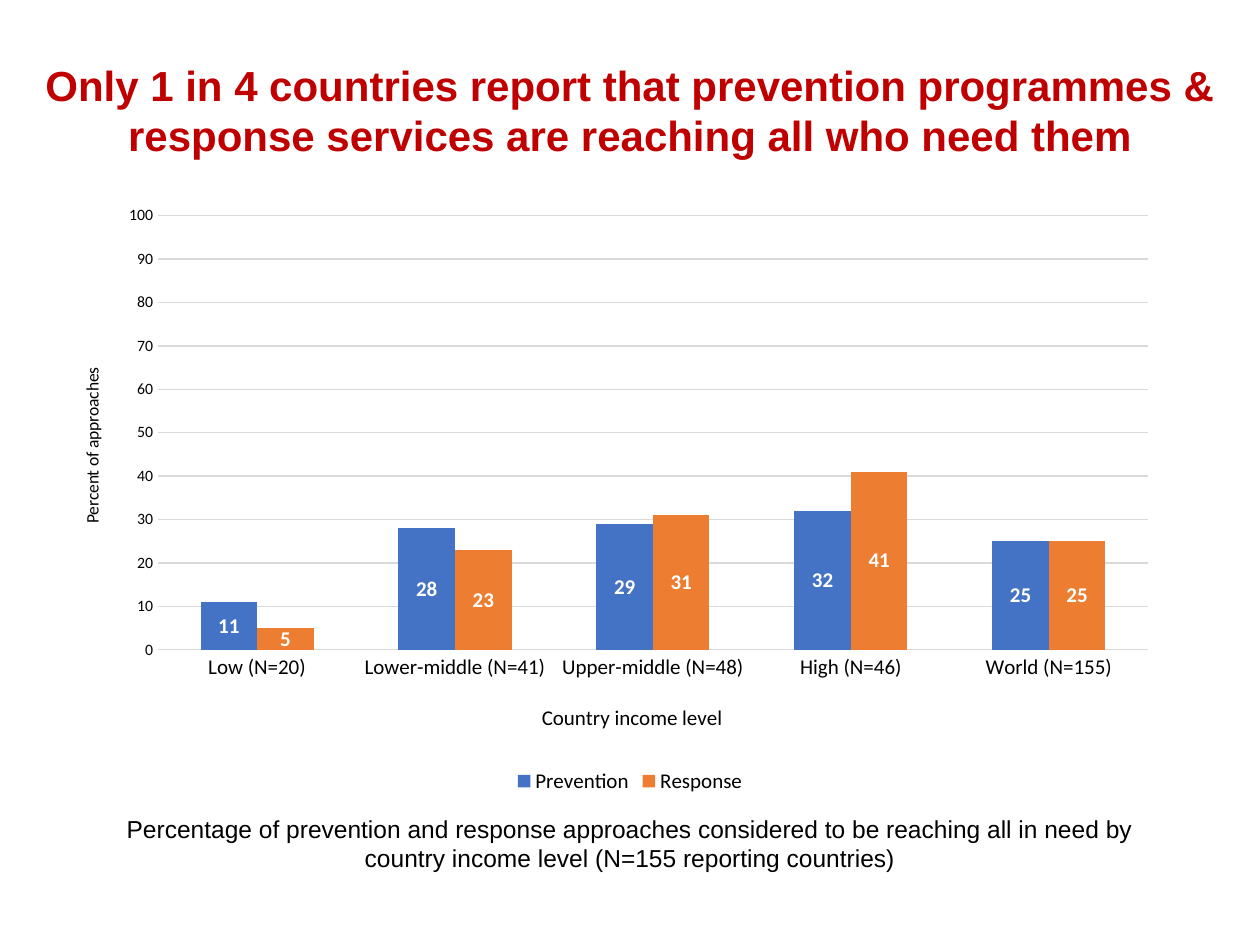
from dataclasses import dataclass

from lxml.etree import SubElement
from pptx import Presentation
from pptx.chart.data import CategoryChartData
from pptx.dml.color import RGBColor
from pptx.enum.chart import XL_CHART_TYPE, XL_LABEL_POSITION, XL_LEGEND_POSITION, XL_TICK_MARK
from pptx.enum.text import MSO_ANCHOR, MSO_AUTO_SIZE, PP_ALIGN
from pptx.oxml import parse_xml
from pptx.oxml.ns import nsdecls, qn
from pptx.util import Cm, Pt


@dataclass(frozen=True)
class Theme:
    head: str = "C00000"
    ink: str = "000000"
    grid: str = "D9D9D9"
    white: str = "FFFFFF"
    blue: str = "4472C4"
    orange: str = "ED7D31"
    face: str = "Arial"
    plot: str = "Calibri"
    big: float = 24
    body: float = 14
    label: float = 12
    base: float = 10
    tick: float = 9


THEME = Theme()
LEVELS = ["Low (N=20)", "Lower-middle (N=41)", "Upper-middle (N=48)",
          "High (N=46)", "World (N=155)"]
SERIES = [("Prevention", [11, 28, 29, 32, 25], THEME.blue),
          ("Response", [5, 23, 31, 41, 25], THEME.orange)]


def style(font, size, color=THEME.ink, face=THEME.plot, bold=False):
    font.size = Pt(size)
    font.name = face
    font.bold = bold
    font.color.rgb = RGBColor.from_string(color)


def write(shape, box, text, size, color, bold=False):
    shape.left, shape.top, shape.width, shape.height = (Cm(v) for v in box)
    frame = shape.text_frame
    frame.word_wrap = True
    frame.auto_size = MSO_AUTO_SIZE.NONE
    frame.vertical_anchor = MSO_ANCHOR.TOP
    frame.text = text
    para = frame.paragraphs[0]
    para.alignment = PP_ALIGN.CENTER
    style(para.runs[0].font, size, color, THEME.face, bold)


def place(node, index, **spots):
    old = node.find(qn("c:layout"))
    if old is not None:
        node.remove(old)
    layout = parse_xml(f"<c:layout {nsdecls('c')}><c:manualLayout/></c:layout>")
    for name, value in spots.items():
        SubElement(layout[0], qn(f"c:{name}")).set("val", str(value))
    node.insert(index, layout)


def name_axis(axis, text, size, x, y):
    title = axis.axis_title
    title.text_frame.text = text
    style(title.text_frame.paragraphs[0].runs[0].font, size)
    place(title._element, 1, xMode="edge", yMode="edge", x=x, y=y)


def rule(line):
    line.color.rgb = RGBColor.from_string(THEME.grid)
    line.width = Pt(0.75)


def set_axes(chart):
    cat, val = chart.category_axis, chart.value_axis
    for axis, size in ((cat, THEME.label), (val, THEME.tick)):
        axis.major_tick_mark = axis.minor_tick_mark = XL_TICK_MARK.NONE
        style(axis.tick_labels.font, size)
    rule(cat.format.line)
    val.format.line.fill.background()
    val.minimum_scale, val.maximum_scale, val.major_unit = 0, 100, 10
    val.tick_labels.number_format = "0"
    val.tick_labels.number_format_is_linked = False
    rule(val.major_gridlines.format.line)
    name_axis(cat, "Country income level", THEME.label, 0.42, 0.84)
    name_axis(val, "Percent of approaches", THEME.base, 0.02, 0.3)


def set_bars(plot):
    plot.gap_width = 150
    plot.overlap = 0
    plot.vary_by_categories = False
    for series, (_, _, color) in zip(plot.series, SERIES):
        series.format.fill.solid()
        series.format.fill.fore_color.rgb = RGBColor.from_string(color)
        labels = series.data_labels
        labels.show_value = True
        labels.position = XL_LABEL_POSITION.CENTER
        labels.number_format = "0"
        labels.number_format_is_linked = False
        style(labels.font, THEME.label, THEME.white, bold=True)


def add_bars(slide, box):
    data = CategoryChartData(number_format="0")
    data.categories = LEVELS
    for name, values, _ in SERIES:
        data.add_series(name, values)
    chart = slide.shapes.add_chart(
        XL_CHART_TYPE.COLUMN_CLUSTERED, *(Cm(v) for v in box), data).chart
    style(chart.font, THEME.base)
    chart.has_title = False
    chart.has_legend = True
    chart.legend.position = XL_LEGEND_POSITION.BOTTOM
    chart.legend.include_in_layout = False
    style(chart.legend.font, THEME.label)
    set_axes(chart)
    set_bars(chart.plots[0])
    area = chart._chartSpace.find(".//" + qn("c:plotArea"))
    place(area, 0, layoutTarget="inner", xMode="edge", yMode="edge",
          x=0.09, y=0.06, w=0.86, h=0.7)


def main():
    deck = Presentation()
    deck.slide_width, deck.slide_height = Cm(25.4), Cm(19.05)
    slide = deck.slides.add_slide(deck.slide_layouts[5])
    write(slide.shapes.title, (0.5, 1.07, 24.4, 2.3),
          "Only 1 in 4 countries report that prevention programmes & "
          "response services are reaching all who need them",
          THEME.big, THEME.head, True)
    add_bars(slide, (1.1, 3.6, 23.2, 12.5))
    note = slide.shapes.add_textbox(0, 0, 0, 0)
    write(note, (2.1, 16.28, 21.2, 2.05),
          "Percentage of prevention and response approaches considered to be "
          "reaching all in need by country income level (N=155 reporting countries)",
          THEME.body, THEME.ink)
    deck.save("out.pptx")


if __name__ == "__main__":
    main()
